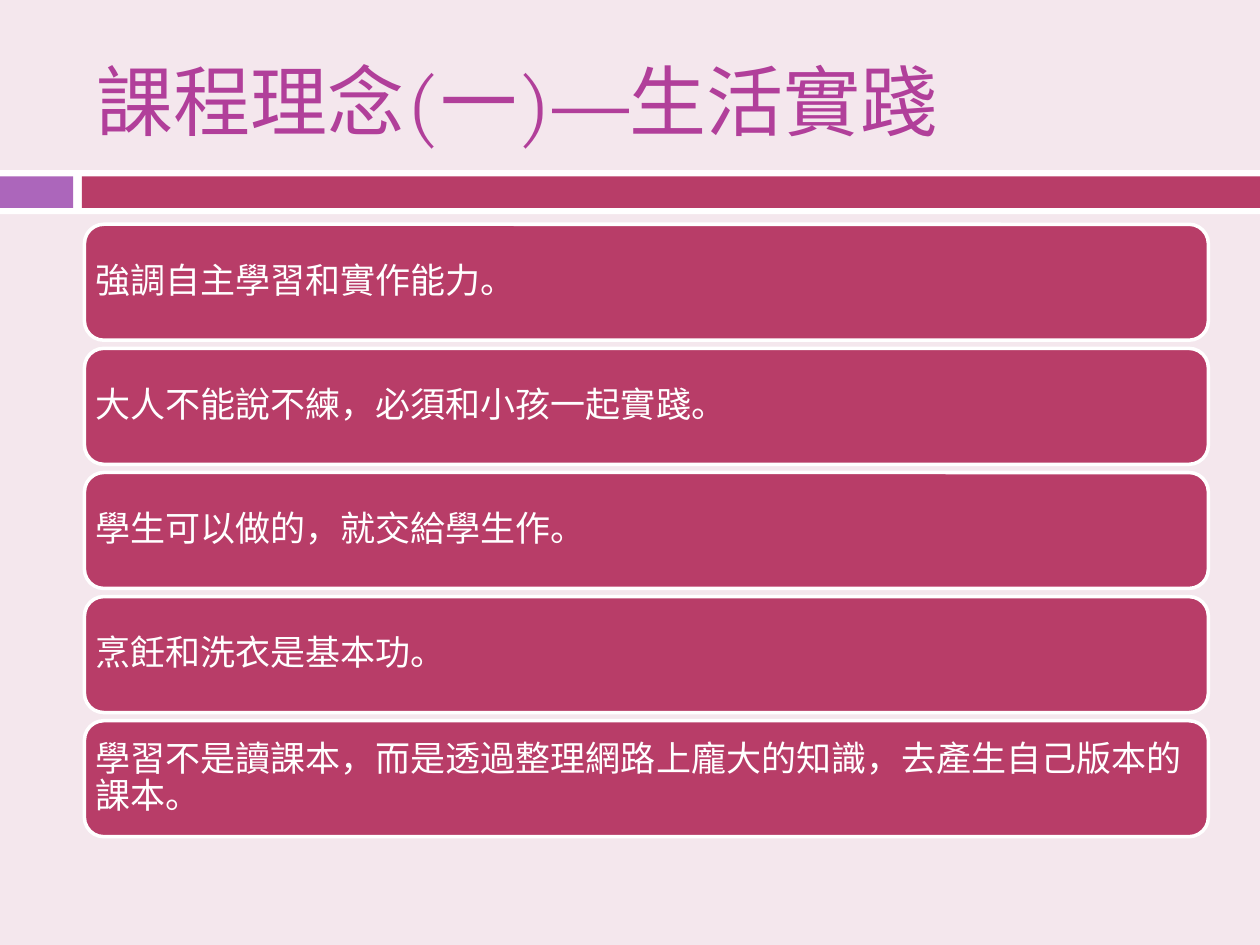
"""Build the slide on the course idea of learning through daily life."""
from pptx import Presentation
from pptx.dml.color import RGBColor as RGB
from pptx.enum.shapes import MSO_SHAPE as Kind
from pptx.enum.text import MSO_ANCHOR as Anchor, PP_ALIGN as Align
from pptx.util import Inches, Pt

FONT = "TeX Gyre Pagella"
WHITE, ROSE, LILAC, PLUM, PALE = "FFFFFF", "B83D68", "AC66BB", "B13F9A", "F4E7ED"
TITLE = "課程理念(一)—生活實踐"
POINTS = [
    "強調自主學習和實作能力。",
    "大人不能說不練，必須和小孩一起實踐。",
    "學生可以做的，就交給學生作。",
    "烹飪和洗衣是基本功。",
    "學習不是讀課本，而是透過整理網路上龐大的知識，去產生自己版本的課本。",
]
BANDS = [
    (0, 1.35, 10, 0.35, WHITE),
    (0, 1.4, 0.58, 0.25, LILAC),
    (0.65, 1.4, 9.35, 0.25, ROSE),
]
LEFT, WIDTH = 0.67, 8.92
TOP, HIGH, STEP = 1.78, 0.92, 0.985


def paint(fill, color):
    fill.solid()
    fill.fore_color.rgb = RGB.from_string(color)


def block(slide, kind, box, color):
    shape = slide.shapes.add_shape(kind, *map(Inches, box))
    shape.shadow.inherit = False
    paint(shape.fill, color)
    shape.line.fill.background()
    return shape


def write(shape, text, size, color, side, edge):
    frame = shape.text_frame
    frame.text = text
    frame.word_wrap = True
    frame.vertical_anchor = Anchor.MIDDLE
    frame.margin_left = frame.margin_right = Inches(side)
    frame.margin_top = frame.margin_bottom = Inches(edge)
    para = frame.paragraphs[0]
    para.alignment = Align.LEFT
    font = para.runs[0].font
    font.name, font.size = FONT, Pt(size)
    font.color.rgb = RGB.from_string(color)
    return para


def main():
    deck = Presentation()
    deck.slide_width, deck.slide_height = Inches(10), Inches(7.5)
    slide = deck.slides.add_slide(deck.slide_layouts[6])
    paint(slide.background.fill, PALE)

    for *box, color in BANDS:
        block(slide, Kind.RECTANGLE, box, color)

    head = slide.shapes.add_textbox(*map(Inches, (LEFT, 0.25, WIDTH, 1.08)))
    write(head, TITLE, 44, PLUM, 0.1, 0.05)

    for row, text in enumerate(POINTS):
        box = LEFT, TOP + row * STEP, WIDTH, HIGH
        card = block(slide, Kind.ROUNDED_RECTANGLE, box, ROSE)
        paint(card.line.fill, WHITE)
        card.line.width = Pt(2)
        para = write(card, text, 20, WHITE, 0.04, 0.04)
        para.line_spacing = 0.9
        para.space_after = Pt(7)

    deck.save("out.pptx")


if __name__ == "__main__":
    main()
